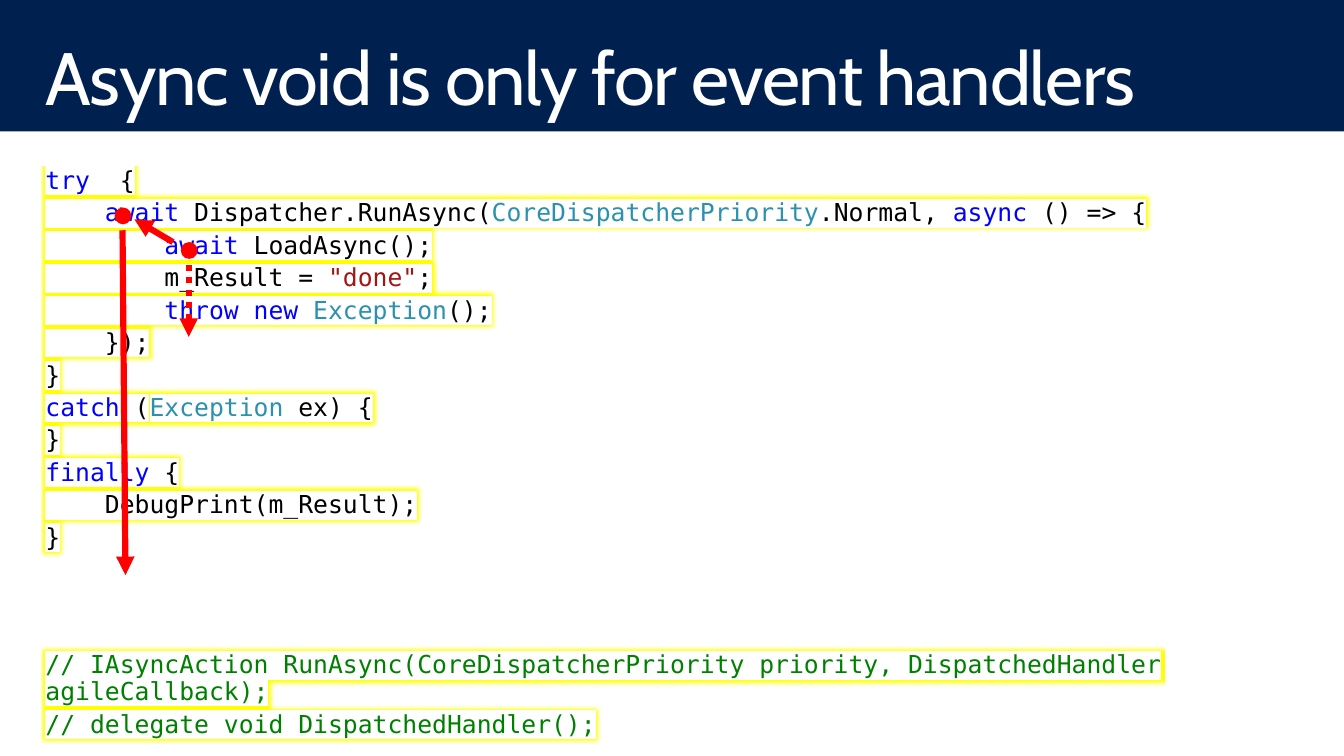
from lxml.etree import SubElement
from pptx import Presentation
from pptx.dml.color import RGBColor
from pptx.enum.dml import MSO_LINE
from pptx.enum.shapes import MSO_CONNECTOR, MSO_SHAPE
from pptx.enum.text import MSO_ANCHOR, MSO_AUTO_SIZE, PP_ALIGN
from pptx.oxml.ns import qn
from pptx.util import Inches, Pt

COLORS = {
    "navy": "002050", "white": "FFFFFF", "plain": "000000", "keyword": "0000FF",
    "type": "2B91AF", "string": "A31515", "comment": "008000",
    "glow": "FFFF00", "flow": "FF0000",
}
TITLE = "Async void is only for event handlers"
CODE = [
    [("try", "keyword"), ("  {", "plain")],
    [("    ", "plain"), ("await", "keyword"), (" Dispatcher.RunAsync(", "plain"),
     ("CoreDispatcherPriority", "type"), (".Normal, ", "plain"),
     ("async", "keyword"), (" () => {", "plain")],
    [("        ", "plain"), ("await", "keyword"), (" LoadAsync();", "plain")],
    [("        m_Result = ", "plain"), ('"done"', "string"), (";", "plain")],
    [("        ", "plain"), ("throw", "keyword"), (" ", "plain"), ("new", "keyword"),
     (" ", "plain"), ("Exception", "type"), ("();", "plain")],
    [("    });", "plain")],
    [("}", "plain")],
    [("catch", "keyword"), (" (", "plain"), ("Exception", "type"), (" ex) {", "plain")],
    [("}", "plain")],
    [("finally ", "keyword"), ("{", "plain")],
    [("    DebugPrint(m_Result);", "plain")],
    [("}", "plain")],
]
SIGNATURES = [
    [("// IAsyncAction RunAsync(CoreDispatcherPriority priority, "
      "DispatchedHandler agileCallback);", "comment")],
    [("// delegate void DispatchedHandler();", "comment")],
]
ARROWS = [
    ((1.91, 2.68), (1.91, 3.41), MSO_LINE.ROUND_DOT),
    ((1.75, 2.45), (1.36, 2.22), None),
    ((1.24, 2.33), (1.27, 5.82), None),
]
DOTS = [(1.16, 2.1), (1.83, 2.45)]
DOT_SIZE = 0.17
LINE_GAP, SECTION_GAP = 4.2, 73.5


def rgb(name):
    return RGBColor.from_string(COLORS[name])


def add_shape(slide, kind, box, color):
    sp = slide.shapes.add_shape(kind, *map(Inches, box))
    sp.shadow.inherit = False
    sp.fill.solid()
    sp.fill.fore_color.rgb = rgb(color)
    sp.line.fill.background()
    return sp


def place(sp, box, anchor):
    sp.left, sp.top, sp.width, sp.height = map(Inches, box)
    tf = sp.text_frame
    tf.margin_left = tf.margin_right = Inches(0.16)
    tf.margin_top = tf.margin_bottom = Inches(0.1)
    tf.vertical_anchor = anchor
    tf.auto_size = MSO_AUTO_SIZE.NONE
    tf.word_wrap = True
    return tf


def style(r, font, size, color):
    r.font.size = Pt(size)
    r.font.color.rgb = rgb(color)
    r.font.name = font


def add_glow(r):
    rPr = r.font._element
    effects = SubElement(rPr, qn("a:effectLst"))
    glow = SubElement(effects, qn("a:glow"), rad=str(Pt(8)))
    SubElement(glow, qn("a:srgbClr"), val=COLORS["glow"])
    highlight = SubElement(rPr, qn("a:highlight"))
    SubElement(highlight, qn("a:srgbClr"), val=COLORS["white"])
    latin = rPr.find(qn("a:latin"))
    latin.addprevious(effects)
    latin.addprevious(highlight)


def add_code(tf):
    for i, line in enumerate(CODE + SIGNATURES):
        p = tf.paragraphs[0] if i == 0 else tf.add_paragraph()
        p.alignment = PP_ALIGN.LEFT
        p.line_spacing = 0.9
        gap = SECTION_GAP if i == len(CODE) else LINE_GAP
        p.space_before = Pt(gap if i else 0)
        pPr = p._p.get_or_add_pPr()
        pPr.set("marL", "0")
        pPr.set("indent", "0")
        SubElement(pPr, qn("a:buNone"))
        for text, color in line:
            r = p.add_run()
            r.text = text
            style(r, "DejaVu Sans Mono", 18, color)
            add_glow(r)


def add_arrow(slide, start, end, dash):
    cx = slide.shapes.add_connector(
        MSO_CONNECTOR.STRAIGHT, *map(Inches, start + end))
    cx.line.color.rgb = rgb("flow")
    cx.line.width = Pt(4.5)
    if dash:
        cx.line.dash_style = dash
    SubElement(cx.line._get_or_add_ln(), qn("a:tailEnd"), type="triangle")
    SubElement(cx._element.spPr, qn("a:effectLst"))


def main():
    prs = Presentation()
    prs.slide_width, prs.slide_height = Inches(13.6), Inches(7.65)
    slide = prs.slides.add_slide(prs.slide_layouts[1])
    slide.background.fill.solid()
    slide.background.fill.fore_color.rgb = rgb("navy")

    panel = add_shape(slide, MSO_SHAPE.RECTANGLE, (0, 1.33, 13.6, 6.32), "white")
    slide.shapes._spTree.insert(2, panel._element)

    tf = place(slide.shapes.title, (0.3, 0.32, 13, 1), MSO_ANCHOR.MIDDLE)
    tf.text = TITLE
    p = tf.paragraphs[0]
    p.alignment = PP_ALIGN.LEFT
    p.line_spacing = 0.9
    style(p.runs[0], "Cabin", 54, "white")
    p.runs[0].font._element.set("spc", "-100")

    add_code(place(slide.placeholders[1], (0.3, 1.6, 13, 5.82), MSO_ANCHOR.TOP))

    for start, end, dash in ARROWS:
        add_arrow(slide, start, end, dash)
    for x, y in DOTS:
        add_shape(slide, MSO_SHAPE.OVAL, (x, y, DOT_SIZE, DOT_SIZE), "flow")

    prs.save("out.pptx")


if __name__ == "__main__":
    main()
